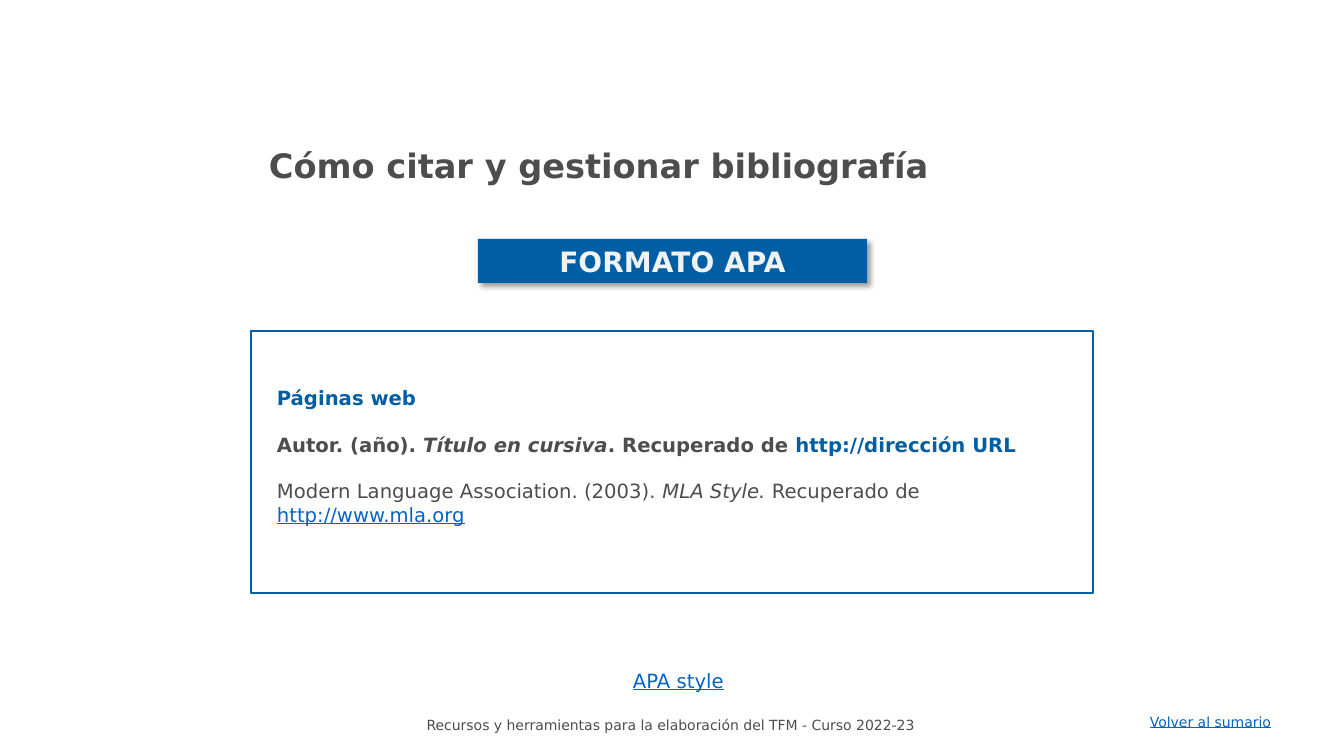
from lxml import etree
from pptx import Presentation
from pptx import util as u
from pptx.dml.color import RGBColor
from pptx.enum import shapes, text
from pptx.oxml.ns import qn

PX = 12192000 / 1344
FONT = "DejaVu Sans"
COLORS = {"blue": "005EA4", "gray": "4D4D4D", "link": "0563C1", "pale": "F2F2F2"}


def px(*vals):
    return [u.Emu(round(v * PX)) for v in vals]


def write(shape, paras, size, align="LEFT", wrap=True, gap=0):
    """Each paragraph is a list of (words, color, font settings)."""
    frame = shape.text_frame
    frame.word_wrap = wrap
    frame.vertical_anchor = text.MSO_ANCHOR.MIDDLE
    for i, runs in enumerate(paras):
        para = frame.paragraphs[0] if i == 0 else frame.add_paragraph()
        para.alignment = text.PP_ALIGN[align]
        if i:
            para.space_before = u.Pt(gap)
        for words, color, extra in runs:
            run = para.add_run()
            run.text = words
            run.font.color.rgb = RGBColor.from_string(COLORS[color])
            for key, val in {"name": FONT, "size": u.Pt(size), **extra}.items():
                setattr(run.font, key, val)


deck = Presentation()
deck.slide_width, deck.slide_height = px(1344, 756)
slide = deck.slides.add_slide(deck.slide_layouts[6])
items = slide.shapes
blue = RGBColor.from_string(COLORS["blue"])

bold = {"bold": True}
slant = {"italic": True}
under = {"underline": True}

# Citation frame
frame = items.add_shape(shapes.MSO_SHAPE.RECTANGLE, *px(251, 331, 842, 262))
frame.shadow.inherit = False
frame.fill.background()
frame.line.color.rgb = blue
frame.line.width = u.Pt(1)

# Citation rule and example
cite = [
    [("Páginas web", "blue", bold)],
    [("Autor. (año). ", "gray", bold),
     ("Título en cursiva", "gray", {**bold, **slant}),
     (". Recuperado de ", "gray", bold),
     ("http://dirección URL", "blue", bold)],
    [("Modern Language Association. (2003). ", "gray", {}),
     ("MLA Style.", "gray", slant),
     (" Recuperado de ", "gray", {}),
     ("http://www.mla.org", "link", under)],
]
write(items.add_textbox(*px(267, 380, 809, 152)), cite, 14, gap=16.5)

# Title, links and footer
labels = [
    ("Cómo citar y gestionar bibliografía", (259, 140, 842, 50), 24, "gray", bold, "LEFT", True),
    ("APA style", (623, 664, 113, 34), 14, "link", under, "LEFT", False),
    ("Volver al sumario", (1140, 708, 145, 27), 10, "link", under, "LEFT", False),
    ("Recursos y herramientas para la elaboración del TFM - Curso 2022-23",
     (270, 711, 801, 27), 10, "gray", {}, "CENTER", True),
]
for words, box, size, color, extra, align, wrap in labels:
    write(items.add_textbox(*px(*box)), [[(words, color, extra)]], size, align, wrap)

# Banner with a soft shadow
banner = items.add_shape(shapes.MSO_SHAPE.RECTANGLE, *px(478, 239, 389, 44))
banner.fill.solid()
banner.fill.fore_color.rgb = blue
banner.line.fill.background()
banner.shadow.inherit = False
effects = banner.element.spPr.find(qn("a:effectLst"))
shade = etree.SubElement(effects, qn("a:outerShdw"), blurRad=str(u.Pt(4)),
                         dist=str(u.Pt(3)), dir="2700000", algn="tl", rotWithShape="0")
tint = etree.SubElement(shade, qn("a:srgbClr"), val="000000")
etree.SubElement(tint, qn("a:alpha"), val="40000")
write(banner, [[("FORMATO APA", "pale", bold)]], 20, "CENTER")

deck.save("out.pptx")
